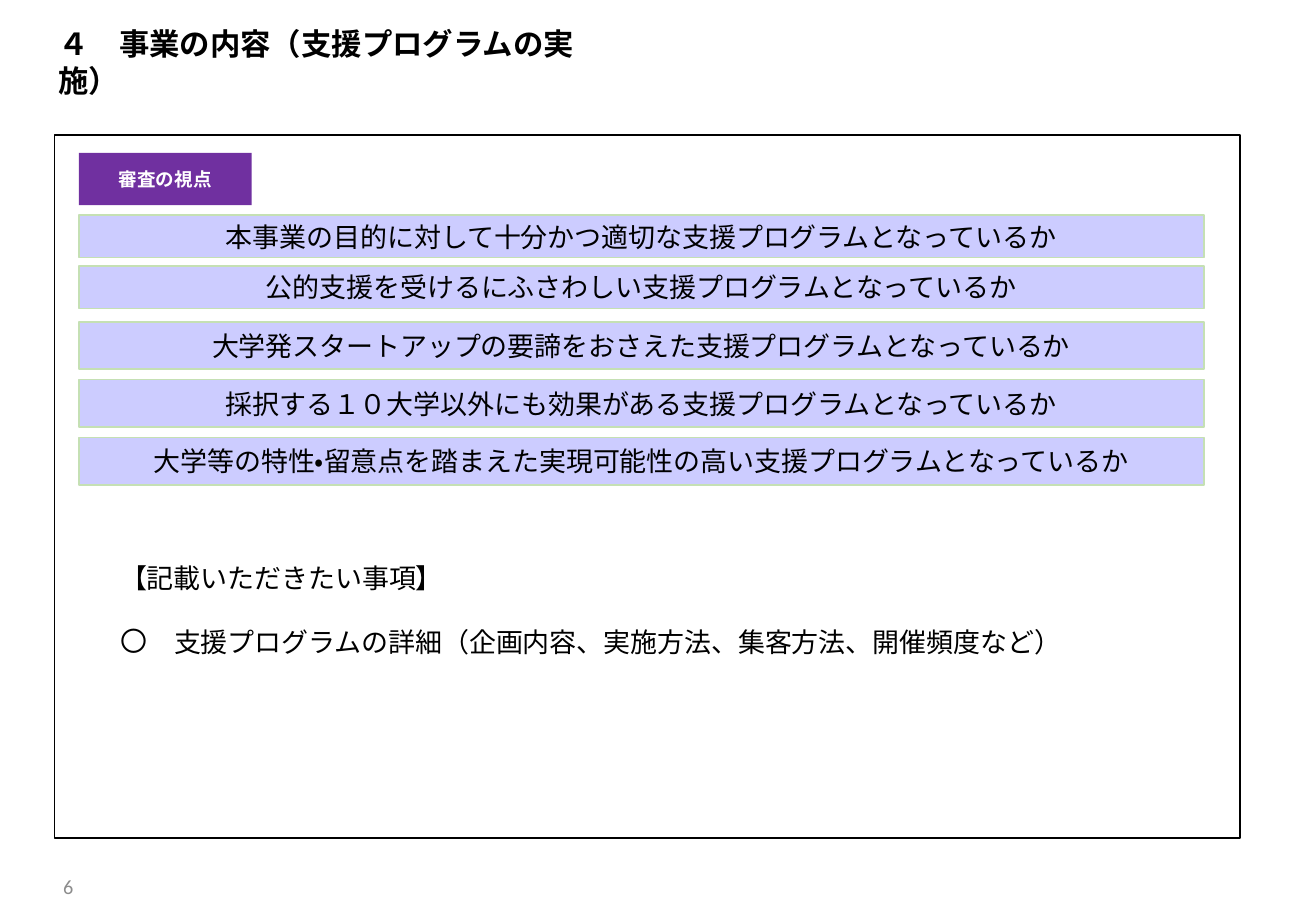
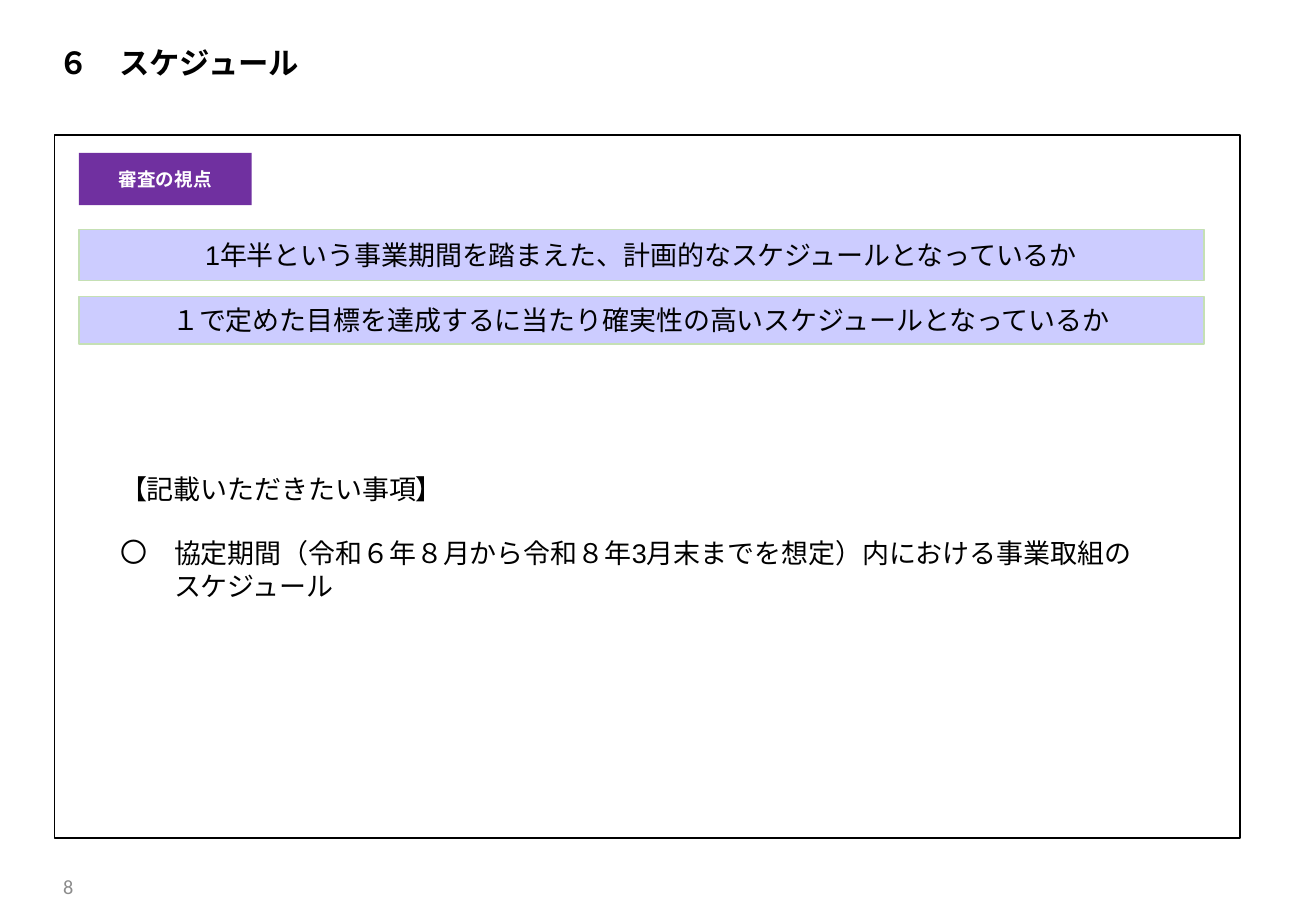
import pptx
import pptx.util
import pptx.dml.color
import pptx.enum.lang
import pptx.enum.shapes
import pptx.enum.text
import pptx.oxml
import pptx.oxml.ns
from collections import namedtuple

Cm = pptx.util.Cm
Pt = pptx.util.Pt
ALIGN = pptx.enum.text.PP_ALIGN
ANCHOR = pptx.enum.text.MSO_ANCHOR
Box = namedtuple("Box", "left top width height")

BLACK, WHITE, GREY = "000000", "FFFFFF", "8C8C8C"
PURPLE, LAVENDER, GREEN = "7030A0", "CCCCFF", "C5E0B4"
FRAME = Box(1.14, 2.82, 24.79, 14.71)
NUMBER = Box(1.17, 18.29, 0.51, 0.48)
INSET = 0.1
PAD = 0.51

TITLE = {"size": Pt(18), "bold": True, "name": "Calibri"}
BADGE = {"size": Pt(11), "bold": True, "name": "Arial"}
BAR = {"size": Pt(16), "bold": False}
NOTE = {"size": Pt(16), "bold": False, "name": "Arial"}
PAGE = {"size": Pt(12), "bold": False, "name": "Calibri"}

SLIDES = [
    {
        "title": "４　事業の内容（支援プログラムの実施）",
        "title_width": 12.62,
        "number": "6",
        "bars": [
            (1.68, 0.89, 1.06, [
                ("Calibri", "本事業の目的に対して十分かつ適切な支援プログラムとなっているか"),
                ("Arial", "公的支援を受けるにふさわしい支援プログラムとなっているか"),
            ]),
            (3.91, 0.99, 1.21, [
                ("Calibri", "大学発スタートアップの要諦をおさえた支援プログラムとなっているか"),
                ("Calibri", "採択する１０大学以外にも効果がある支援プログラムとなっているか"),
                ("Calibri", "大学等の特性・留意点を踏まえた実現可能性の高い支援プログラムとなっているか"),
            ]),
        ],
        "notes_top": 8.92,
        "note": "支援プログラムの詳細（企画内容、実施方法、集客方法、開催頻度など）",
    },
    {
        "title": "６　スケジュール",
        "title_width": 10.29,
        "number": "8",
        "bars": [
            (1.98, 1.07, 1.4, [
                ("Arial", "1年半という事業期間を踏まえた、計画的なスケジュールとなっているか"),
            ]),
            (3.38, 0.99, 1.4, [
                ("Calibri", "１で定めた目標を達成するに当たり確実性の高いスケジュールとなっているか"),
            ]),
        ],
        "notes_top": 7.06,
        "note": "協定期間（令和６年８月から令和８年3月末までを想定）内における事業取組の\vスケジュール",
    },
]


def rgb(color):
    return pptx.dml.color.RGBColor.from_string(color)


def place(sp, box):
    for name, value in box._asdict().items():
        setattr(sp, name, Cm(value))


def set_frame(tf, inset, anchor, wrap=True):
    values = {
        "word_wrap": wrap,
        "auto_size": pptx.enum.text.MSO_AUTO_SIZE.NONE,
        "vertical_anchor": anchor,
    }
    for side in ("left", "top", "right", "bottom"):
        values["margin_" + side] = Cm(inset)
    for name, value in values.items():
        setattr(tf, name, value)


def write(p, text, style, color, align):
    p.text = text
    p.alignment = align
    p.space_before = Pt(0)
    for r in p.runs:
        r.font.color.rgb = rgb(color)
        r.font.language_id = pptx.enum.lang.MSO_LANGUAGE_ID.JAPANESE
        for name, value in style.items():
            setattr(r.font, name, value)


def set_bullet(p, char=None, indent=0):
    pPr = p._p.get_or_add_pPr()
    pPr.set("marL", str(indent))
    pPr.set("indent", str(-indent))
    bullet = pptx.oxml.parse_xml(
        "<a:%s %s/>" % ("buChar" if char else "buNone", pptx.oxml.ns.nsdecls("a")))
    if char:
        bullet.set("char", char)
    pPr.append(bullet)


def add_rect(s, box, fill, line=None):
    sp = s.shapes.add_shape(
        pptx.enum.shapes.MSO_SHAPE.RECTANGLE, *(Cm(v) for v in box))
    sp.shadow.inherit = False
    sp.fill.solid()
    sp.fill.fore_color.rgb = rgb(fill)
    if line:
        sp.line.color.rgb = rgb(line)
        sp.line.width = Pt(1)
    else:
        sp.line.fill.background()
    return sp


def add_label(s, box, text, style, color, fill, line=None):
    tf = add_rect(s, box, fill, line).text_frame
    set_frame(tf, INSET, ANCHOR.MIDDLE)
    write(tf.paragraphs[0], text, style, color, ALIGN.CENTER)


def fill_title(s, box, text):
    sp = s.shapes.title
    place(sp, box)
    set_frame(sp.text_frame, INSET, ANCHOR.MIDDLE)
    sp.text_frame.margin_right = Cm(1.27)
    write(sp.text_frame.paragraphs[0], text, TITLE, BLACK, ALIGN.LEFT)


def add_criteria(s, box, groups):
    frame = add_rect(s, box, WHITE, BLACK)
    s.shapes.element.insert(2, frame.element)
    left = box.left + PAD
    add_label(s, Box(left, box.top + 0.38, 3.61, 1.09),
              "審査の視点", BADGE, WHITE, PURPLE)
    for top, height, pitch, bars in groups:
        for i, (font, text) in enumerate(bars):
            bar = Box(left, box.top + top + i * pitch, 23.52, height)
            add_label(s, bar, text, dict(BAR, name=font), BLACK, LAVENDER, GREEN)


def fill_notes(s, box, text):
    sp = s.placeholders[1]
    place(sp, box)
    tf = sp.text_frame
    set_frame(tf, 0, ANCHOR.TOP)
    heading, item = tf.paragraphs[0], tf.add_paragraph()
    write(heading, "【記載いただきたい事項】", NOTE, BLACK, ALIGN.LEFT)
    heading.space_after = Pt(19)
    set_bullet(heading)
    write(item, text, NOTE, BLACK, ALIGN.LEFT)
    set_bullet(item, "〇", Pt(32))


def add_number(s, box, text):
    tf = s.shapes.add_textbox(*(Cm(v) for v in box)).text_frame
    set_frame(tf, 0, ANCHOR.MIDDLE, wrap=False)
    write(tf.paragraphs[0], text, PAGE, GREY, ALIGN.CENTER)


def add_section(prs, data):
    s = prs.slides.add_slide(prs.slide_layouts[1])
    fill_title(s, Box(1.12, 0.81, data["title_width"], 0.97), data["title"])
    add_criteria(s, FRAME, data["bars"])
    top = data["notes_top"]
    fill_notes(s, Box(FRAME.left + 1.37, FRAME.top + top, 22.4,
                      FRAME.height - top - PAD), data["note"])
    add_number(s, NUMBER, data["number"])


def main():
    prs = pptx.Presentation()
    prs.slide_width, prs.slide_height = Cm(27.51), Cm(19.05)
    for data in SLIDES:
        add_section(prs, data)
    prs.save("out.pptx")


if __name__ == "__main__":
    main()
